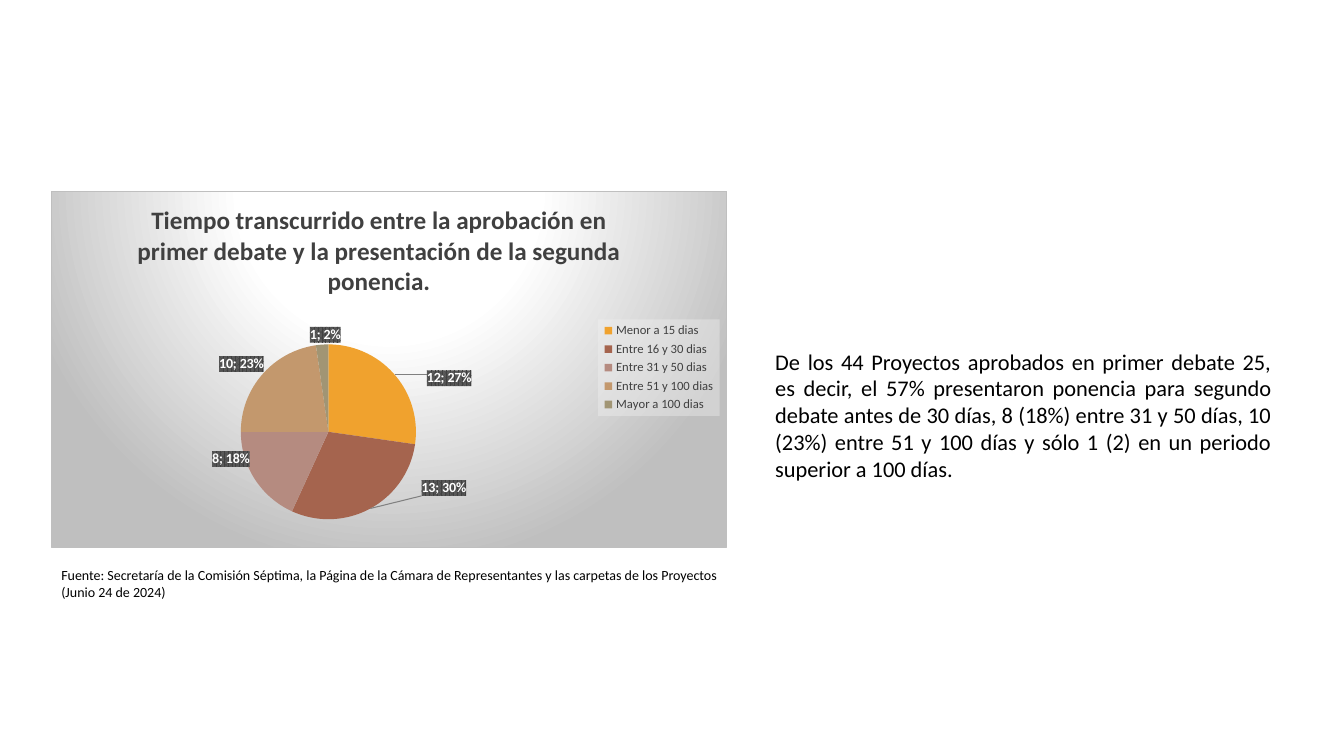
from pptx import Presentation
from pptx.chart.data import CategoryChartData
from pptx.dml.color import RGBColor
from pptx.enum.chart import XL_CHART_TYPE, XL_LEGEND_POSITION
from pptx.enum.text import PP_ALIGN
from pptx.oxml import parse_xml
from pptx.oxml.ns import nsdecls, qn
from pptx.util import Inches, Pt

PIE = XL_CHART_TYPE.PIE
LEGEND_RIGHT = XL_LEGEND_POSITION.RIGHT
LEFT, JUSTIFY = PP_ALIGN.LEFT, PP_ALIGN.JUSTIFY
FONT = "Calibri"
BLACK = RGBColor(0x00, 0x00, 0x00)
WHITE = RGBColor(0xFF, 0xFF, 0xFF)
DARK = RGBColor(0x40, 0x40, 0x40)
LEADER = RGBColor(0x80, 0x80, 0x80)
PALE = RGBColor(0xF2, 0xF2, 0xF2)
SILVER = RGBColor(0xBF, 0xBF, 0xBF)
LABEL_BACK = RGBColor(0x59, 0x59, 0x59)

TITLE = ("Tiempo transcurrido entre la aprobación en primer debate "
         "y la presentación de la segunda ponencia.")
SUMMARY = ("De los 44 Proyectos aprobados en primer debate 25, es decir, el 57% "
           "presentaron ponencia para segundo debate antes de 30 días, 8 (18%) "
           "entre 31 y 50 días, 10 (23%) entre 51 y 100 días y sólo 1 (2) en un "
           "periodo superior a 100 días.")
SOURCE = ("Fuente: Secretaría de la Comisión Séptima, la Página de la Cámara de "
          "Representantes y las carpetas de los Proyectos (Junio 24 de 2024)")
# category, projects, slice colour, label shift
SLICES = [
    ("Menor a 15 dias", 12, RGBColor(0xF0, 0xA2, 0x2E), (0.13, -0.07)),
    ("Entre 16 y 30 dias", 13, RGBColor(0xA5, 0x64, 0x4E), (0.14, 0.05)),
    ("Entre 31 y 50 dias", 8, RGBColor(0xB5, 0x8B, 0x80), (-0.09, 0.01)),
    ("Entre 51 y 100 dias", 10, RGBColor(0xC3, 0x98, 0x6D), (-0.08, -0.11)),
    ("Mayor a 100 dias", 1, RGBColor(0xA1, 0x95, 0x74), (0, -0.15)),
]


def set_font(font, size, color, bold=False):
    """Format a font of the slide."""
    font.name, font.size, font.bold = FONT, Pt(size), bold
    font.color.rgb = color


def add_text(slide, text, left, top, width, height, size, alignment):
    """Add a wrapped text box with one paragraph."""
    frame = slide.shapes.add_textbox(
        Inches(left), Inches(top), Inches(width), Inches(height)).text_frame
    frame.word_wrap = True
    paragraph = frame.paragraphs[0]
    paragraph.alignment = alignment
    run = paragraph.add_run()
    run.text = text
    set_font(run.font, size, BLACK)


def manual_layout(**values):
    """Return the XML of a manual chart layout."""
    parts = "".join(f'<c:{name} val="{value}"/>' for name, value in values.items())
    return f"<c:layout {nsdecls('c')}><c:manualLayout>{parts}</c:manualLayout></c:layout>"


def place(parent, previous, **values):
    """Give a chart part its layout, after the named child or as first child."""
    for layout in parent.findall(qn("c:layout")):
        parent.remove(layout)
    layout = parse_xml(manual_layout(**values))
    if previous:
        parent.find(qn(previous)).addnext(layout)
    else:
        parent.insert(0, layout)


def shape_properties(content):
    """Return a c:spPr element with the given fill and line XML."""
    return parse_xml(f"<c:spPr {nsdecls('c', 'a')}>{content}</c:spPr>")


def solid(color, alpha=100):
    """Return the XML of a solid fill."""
    return (f'<a:solidFill><a:srgbClr val="{color}"><a:alpha val="{alpha * 1000}"/>'
            "</a:srgbClr></a:solidFill>")


def add_labels(series):
    """Add shifted value and percentage labels with leader lines."""
    style = (
        f'<c:spPr><a:pattFill prst="pct75"><a:fgClr><a:srgbClr val="{DARK}"/></a:fgClr>'
        f'<a:bgClr><a:srgbClr val="{LABEL_BACK}"/></a:bgClr></a:pattFill></c:spPr>'
        '<c:txPr><a:bodyPr/><a:p><a:pPr><a:defRPr sz="1000" b="1">'
        f'{solid(WHITE)}<a:latin typeface="{FONT}"/></a:defRPr></a:pPr></a:p></c:txPr>'
        '<c:dLblPos val="ctr"/><c:showLegendKey val="0"/><c:showVal val="1"/>'
        '<c:showCatName val="0"/><c:showSerName val="0"/><c:showPercent val="1"/>'
        '<c:showBubbleSize val="0"/><c:separator>; </c:separator>')
    labels = "".join(
        f'<c:dLbl><c:idx val="{index}"/>{manual_layout(x=x, y=y)}{style}</c:dLbl>'
        for index, (_, _, _, (x, y)) in enumerate(SLICES))
    series.find(qn("c:cat")).addprevious(parse_xml(
        f"<c:dLbls {nsdecls('c', 'a')}>{labels}{style}"
        '<c:showLeaderLines val="1"/><c:leaderLines><c:spPr><a:ln w="9525">'
        f"{solid(LEADER)}</a:ln></c:spPr></c:leaderLines></c:dLbls>"))


def add_background(chart):
    """Give the chart its radial gradient and thin border."""
    stops = "".join(
        f'<a:gs pos="{position * 1000}"><a:srgbClr val="{color}"/></a:gs>'
        for position, color in ((0, WHITE), (39, WHITE), (100, SILVER)))
    chart.element.find(qn("c:chart")).addnext(shape_properties(
        f'<a:gradFill><a:gsLst>{stops}</a:gsLst><a:path path="circle">'
        '<a:fillToRect l="50000" t="-80000" r="50000" b="180000"/></a:path></a:gradFill>'
        f'<a:ln w="9525">{solid(SILVER)}</a:ln>'))


def add_pie(slide):
    """Add the pie chart of elapsed times."""
    data = CategoryChartData()
    data.categories = [name for name, _, _, _ in SLICES]
    data.add_series("Series 1", [count for _, count, _, _ in SLICES])
    chart = slide.shapes.add_chart(
        PIE, Inches(0.51), Inches(1.89), Inches(6.7), Inches(3.55), data).chart
    set_font(chart.font, 10, BLACK)
    chart.plots[0].vary_by_categories = True
    series = chart.plots[0].series[0]
    for index, (_, _, color, _) in enumerate(SLICES):
        fill = series.points[index].format.fill
        fill.solid()
        fill.fore_color.rgb = color
    chart.has_title = True
    run = chart.chart_title.text_frame.paragraphs[0].add_run()
    run.text = TITLE
    set_font(run.font, 18, DARK, True)
    chart.has_legend = True
    chart.legend.position = LEGEND_RIGHT
    chart.legend.include_in_layout = False
    set_font(chart.legend.font, 9, DARK)

    title = chart.element.find(".//" + qn("c:title"))
    legend = chart.element.find(".//" + qn("c:legend"))
    plot_area = chart.element.find(".//" + qn("c:plotArea"))
    place(title, "c:tx", xMode="edge", yMode="edge", x=0.12, y=0.02)
    place(legend, "c:legendPos", xMode="edge", yMode="edge",
          x=0.81, y=0.36, w=0.18, h=0.27)
    place(plot_area, None, layoutTarget="inner", xMode="edge", yMode="edge",
          x=0.28, y=0.43, w=0.26, h=0.49)
    legend.find(qn("c:overlay")).addnext(shape_properties(solid(PALE, 39)))
    add_labels(plot_area.find(".//" + qn("c:ser")))
    add_background(chart)


def main():
    """Build and save the slide."""
    presentation = Presentation()
    presentation.slide_width, presentation.slide_height = Inches(13.33), Inches(7.5)
    slide = presentation.slides.add_slide(presentation.slide_layouts[6])
    add_text(slide, SUMMARY, 7.59, 3.4, 5.12, 1.45, 16, JUSTIFY)
    add_text(slide, SOURCE, 0.51, 5.57, 6.7, 0.44, 10, LEFT)
    add_pie(slide)
    presentation.save("out.pptx")


if __name__ == "__main__":
    main()
